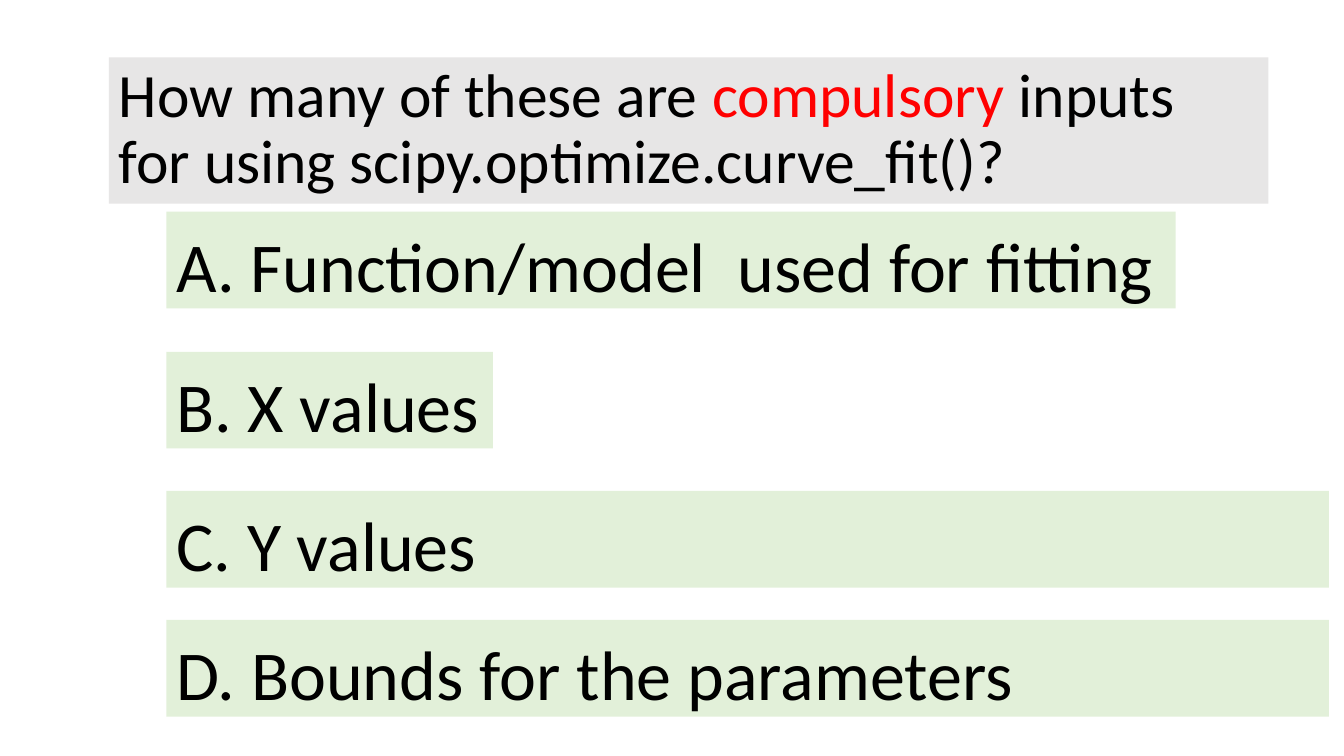
import pptx
import pptx.dml.color
import pptx.enum.text
import pptx.util

RGBColor = pptx.dml.color.RGBColor
Inches = pptx.util.Inches
Pt = pptx.util.Pt
Anchor = pptx.enum.text.MSO_ANCHOR
AutoSize = pptx.enum.text.MSO_AUTO_SIZE

BLACK = RGBColor(0x00, 0x00, 0x00)
RED = RGBColor(0xFF, 0x00, 0x00)
GREY = RGBColor(0xE7, 0xE6, 0xE6)
GREEN = RGBColor(0xE2, 0xF0, 0xD9)
WHITE = RGBColor(0xFF, 0xFF, 0xFF)

QUESTION = [
    ("How many of these are ", BLACK),
    ("compulsory", RED),
    (" inputs for using scipy.optimize.curve_fit()?", BLACK),
]
QUESTION_BOX = (1.08, 0.57, 11.5, 1.45)
QUESTION_FRAME = {"word_wrap": True, "vertical_anchor": Anchor.MIDDLE}
QUESTION_PARA = {"line_spacing": 0.9}

OPTION_LEFT, OPTION_HEIGHT = 1.65, 0.96
FULL_WIDTH = 11.53
# Wording, top, width, whether the text wraps
OPTIONS = [
    ("A. Function/model  used for fitting", 2.1, 10.01, False),
    ("B. X values", 3.49, 3.24, False),
    ("C. Y values", 4.87, FULL_WIDTH, True),
    ("D. Bounds for the parameters", 6.15, FULL_WIDTH, True),
]
OPTION_PARA = {"line_spacing": 1.07, "space_after": Pt(8)}


def apply_format(target, values):
    for name, value in values.items():
        setattr(target, name, value)


def add_text_panel(page, box, fill, spans, size, frame_format, para_format):
    """Add a filled text box holding one paragraph of coloured spans."""
    panel = page.shapes.add_textbox(*map(Inches, box))
    panel.fill.solid()
    panel.fill.fore_color.rgb = fill
    apply_format(panel.text_frame, frame_format)
    para = panel.text_frame.paragraphs[0]
    apply_format(para, para_format)
    for text, color in spans:
        span = para.add_run()
        span.text = text
        apply_format(span.font, {"name": "Calibri", "size": Pt(size)})
        span.font.color.rgb = color


def add_question(page, box):
    add_text_panel(page, box, GREY, QUESTION, 44, QUESTION_FRAME, QUESTION_PARA)


def add_options(page, left, height):
    for text, top, width, wraps in OPTIONS:
        frame_format = {"word_wrap": wraps, "auto_size": AutoSize.SHAPE_TO_FIT_TEXT}
        add_text_panel(page, (left, top, width, height), GREEN,
                       [(text, BLACK)], 50, frame_format, OPTION_PARA)


def main():
    deck = pptx.Presentation()
    apply_format(deck, {"slide_width": Inches(13.33), "slide_height": Inches(7.5)})
    page = deck.slides.add_slide(deck.slide_layouts[6])
    page.background.fill.solid()
    page.background.fill.fore_color.rgb = WHITE
    add_question(page, QUESTION_BOX)
    add_options(page, OPTION_LEFT, OPTION_HEIGHT)
    deck.save("out.pptx")


if __name__ == "__main__":
    main()
